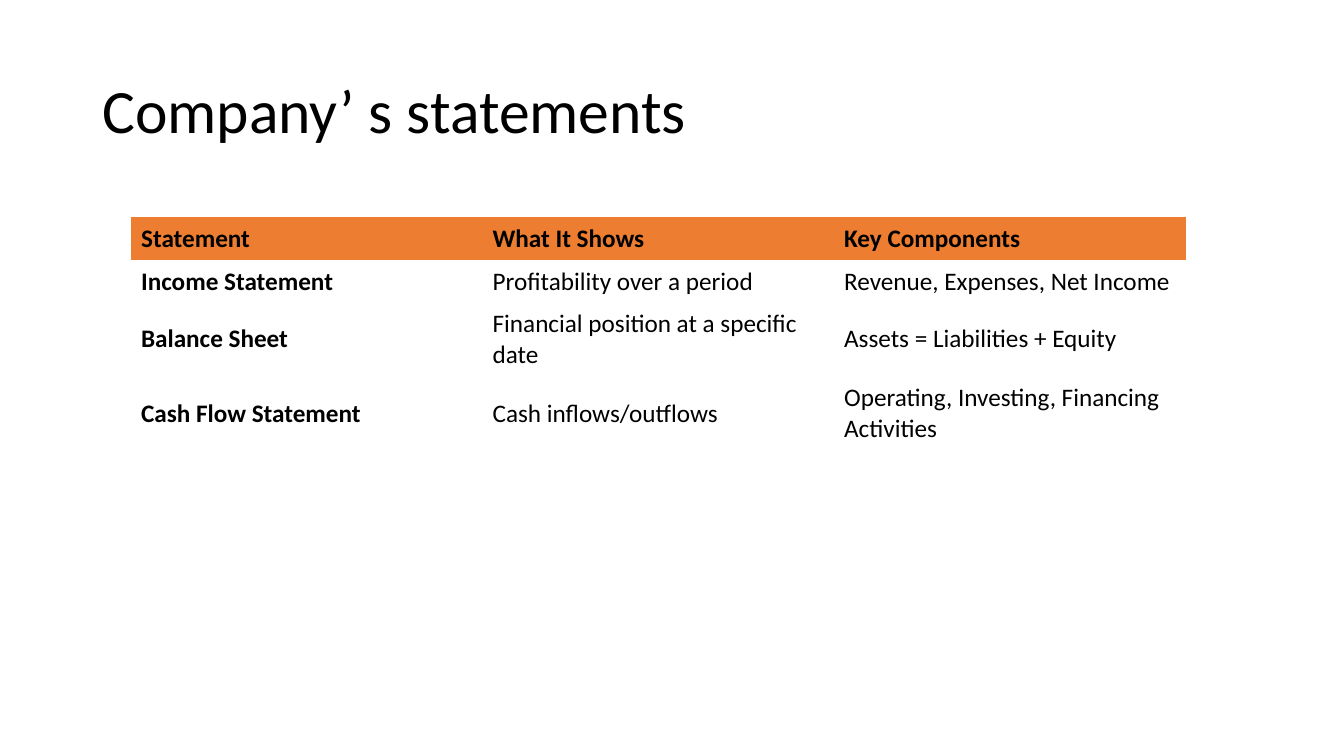
import pptx
import pptx.dml.color
import pptx.enum.text
import pptx.oxml.ns
import pptx.util

Pt = pptx.util.Pt
FONT = "Calibri"
COLORS = {"text": "000000", "header": "ED7D31"}
NO_GRID_STYLE = "{2D5ABB26-0587-4C30-8999-92F81FD0307C}"

STATEMENTS = [
    ["Statement", "What It Shows", "Key Components"],
    ["Income Statement", "Profitability over a period", "Revenue, Expenses, Net Income"],
    ["Balance Sheet", "Financial position at a specific date", "Assets = Liabilities + Equity"],
    ["Cash Flow Statement", "Cash inflows/outflows", "Operating, Investing, Financing Activities"],
]
COLUMN_WIDTH = 251.1
ROW_HEIGHTS = [31, 31, 31, 54.7]


def rgb(name):
    return pptx.dml.color.RGBColor.from_string(COLORS[name])


def write_text(text_frame, text, size=18, bold=False, color="text", line_spacing=None):
    paragraph = text_frame.paragraphs[0]
    paragraph.alignment = pptx.enum.text.PP_ALIGN.LEFT
    paragraph.line_spacing = line_spacing
    run = paragraph.add_run()
    run.text = text
    run.font.name = FONT
    run.font.size = Pt(size)
    run.font.bold = bold
    run.font.color.rgb = rgb(color)


def add_title(slide, text):
    title = slide.shapes.title
    title.left, title.top, title.width, title.height = Pt(66), Pt(28.8), Pt(828), Pt(104.4)
    title.text_frame.vertical_anchor = pptx.enum.text.MSO_ANCHOR.MIDDLE
    write_text(title.text_frame, text, size=44, line_spacing=0.9)


def add_statement_table(slide, rows):
    frame = slide.shapes.add_table(
        len(rows), len(rows[0]), Pt(93.6), Pt(154.8),
        Pt(COLUMN_WIDTH * len(rows[0])), Pt(sum(ROW_HEIGHTS)))
    table = frame.table
    table.horz_banding = False

    # Plain table style without grid lines
    style = frame._element.find(".//" + pptx.oxml.ns.qn("a:tableStyleId"))
    style.text = NO_GRID_STYLE

    for column in table.columns:
        column.width = Pt(COLUMN_WIDTH)
    for row, height in zip(table.rows, ROW_HEIGHTS):
        row.height = Pt(height)

    # Header row is filled; header row and first column are bold
    for row_index, row in enumerate(rows):
        for column_index, text in enumerate(row):
            cell = table.cell(row_index, column_index)
            cell.vertical_anchor = pptx.enum.text.MSO_ANCHOR.MIDDLE
            if row_index == 0:
                cell.fill.solid()
                cell.fill.fore_color.rgb = rgb("header")
            else:
                cell.fill.background()
            write_text(cell.text_frame, text, bold=row_index == 0 or column_index == 0)


def main():
    presentation = pptx.Presentation()
    presentation.slide_width = Pt(960)
    presentation.slide_height = Pt(540)
    slide = presentation.slides.add_slide(presentation.slide_layouts[5])
    add_title(slide, "Company’ s statements")
    add_statement_table(slide, STATEMENTS)
    presentation.save("out.pptx")


if __name__ == "__main__":
    main()
